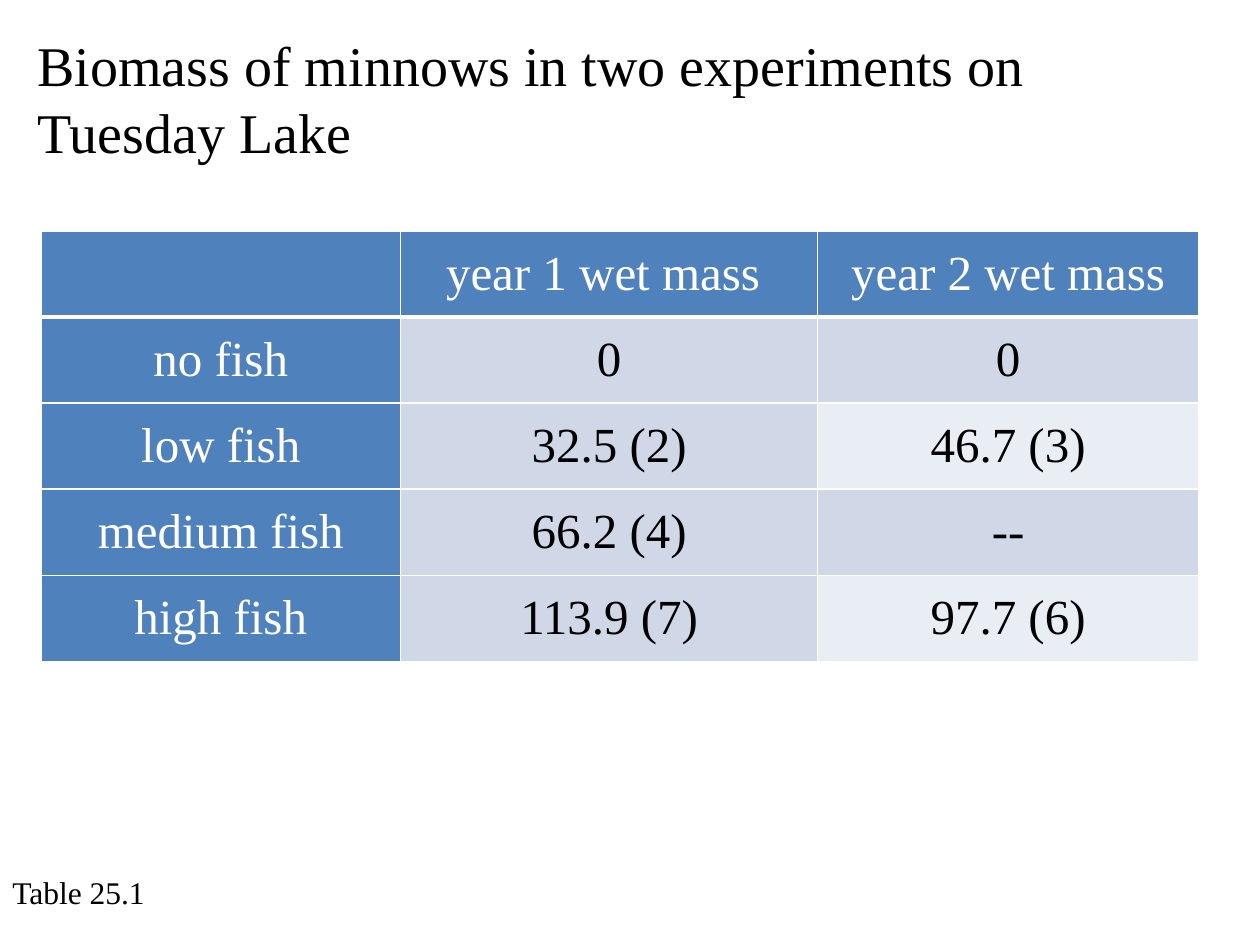
import pptx
import pptx.dml.color
import pptx.enum.text
import pptx.oxml
import pptx.oxml.ns
import pptx.util

Pt = pptx.util.Pt

BLACK, WHITE = "000000", "FFFFFF"
HEADER_FILL, BAND_FILL, LIGHT_FILL = "4F81BD", "D0D8E8", "E9EDF4"

ROWS = [
    ["", "year 1 wet mass ", "year 2 wet mass"],
    ["no fish", "0", "0"],
    ["low fish", "32.5 (2)", "46.7 (3)"],
    ["medium fish", "66.2 (4)", "--"],
    ["high fish", "113.9 (7)", "97.7 (6)"],
]
COLUMN_WIDTHS = [205.7, 238.2, 217.8]
ROW_HEIGHT = 49.2


def color(hex_string):
    return pptx.dml.color.RGBColor.from_string(hex_string)


class SlideBuilder:
    font_name = "Times New Roman"

    def __init__(self, slide):
        self.slide = slide

    def add_run(self, paragraph, text, size, text_color):
        run = paragraph.add_run()
        run.text = text
        run.font.name = self.font_name
        run.font.size = Pt(size)
        run.font.color.rgb = color(text_color)

    def add_text(self, text, left, top, width, height, size, wrap=True):
        box = self.slide.shapes.add_textbox(Pt(left), Pt(top), Pt(width), Pt(height))
        frame = box.text_frame
        frame.word_wrap = wrap
        frame.auto_size = pptx.enum.text.MSO_AUTO_SIZE.SHAPE_TO_FIT_TEXT
        self.add_run(frame.paragraphs[0], text, size, BLACK)

    def add_borders(self, cell, top_width, bottom_width):
        properties = cell._tc.get_or_add_tcPr()
        widths = {"lnL": 1, "lnR": 1, "lnT": top_width, "lnB": bottom_width}
        for side, width in widths.items():
            properties.append(pptx.oxml.parse_xml(
                f'<a:{side} {pptx.oxml.ns.nsdecls("a")} w="{Pt(width)}">'
                f'<a:solidFill><a:srgbClr val="{WHITE}"/></a:solidFill></a:{side}>'))

    def style_cell(self, cell, text, size, fill, text_color):
        cell.fill.solid()
        cell.fill.fore_color.rgb = color(fill)
        cell.vertical_anchor = pptx.enum.text.MSO_ANCHOR.MIDDLE
        cell.margin_left = cell.margin_right = Pt(5)
        cell.margin_top = cell.margin_bottom = Pt(0)
        if text:
            paragraph = cell.text_frame.paragraphs[0]
            paragraph.alignment = pptx.enum.text.PP_ALIGN.CENTER
            self.add_run(paragraph, text, size, text_color)

    def add_table(self, rows, left, top, column_widths, row_height, size):
        """Add a table with a filled header row and first column; the last column is banded."""
        table = self.slide.shapes.add_table(
            len(rows), len(column_widths), Pt(left), Pt(top),
            Pt(sum(column_widths)), Pt(row_height * len(rows))).table
        for column, width in zip(table.columns, column_widths):
            column.width = Pt(width)
        last_column = len(column_widths) - 1
        for row_index, texts in enumerate(rows):
            table.rows[row_index].height = Pt(row_height)
            for column_index, text in enumerate(texts):
                is_header = row_index == 0 or column_index == 0
                is_light = column_index == last_column and row_index % 2 == 0
                fill = HEADER_FILL if is_header else LIGHT_FILL if is_light else BAND_FILL
                cell = table.cell(row_index, column_index)
                self.add_borders(cell, 3 if row_index == 1 else 1, 3 if row_index == 0 else 1)
                self.style_cell(cell, text, size, fill, WHITE if is_header else BLACK)


def main():
    presentation = pptx.Presentation()
    presentation.slide_width, presentation.slide_height = Pt(720), Pt(540)
    builder = SlideBuilder(presentation.slides.add_slide(presentation.slide_layouts[6]))
    builder.add_text("Biomass of minnows in two experiments on Tuesday Lake",
                     14.4, 13.7, 679, 85, 32)
    builder.add_text("Table 25.1", 0, 495.4, 95.8, 28.8, 18, wrap=False)
    builder.add_table(ROWS, 23.3, 132, COLUMN_WIDTHS, ROW_HEIGHT, 28)
    presentation.save("out.pptx")


if __name__ == "__main__":
    main()
